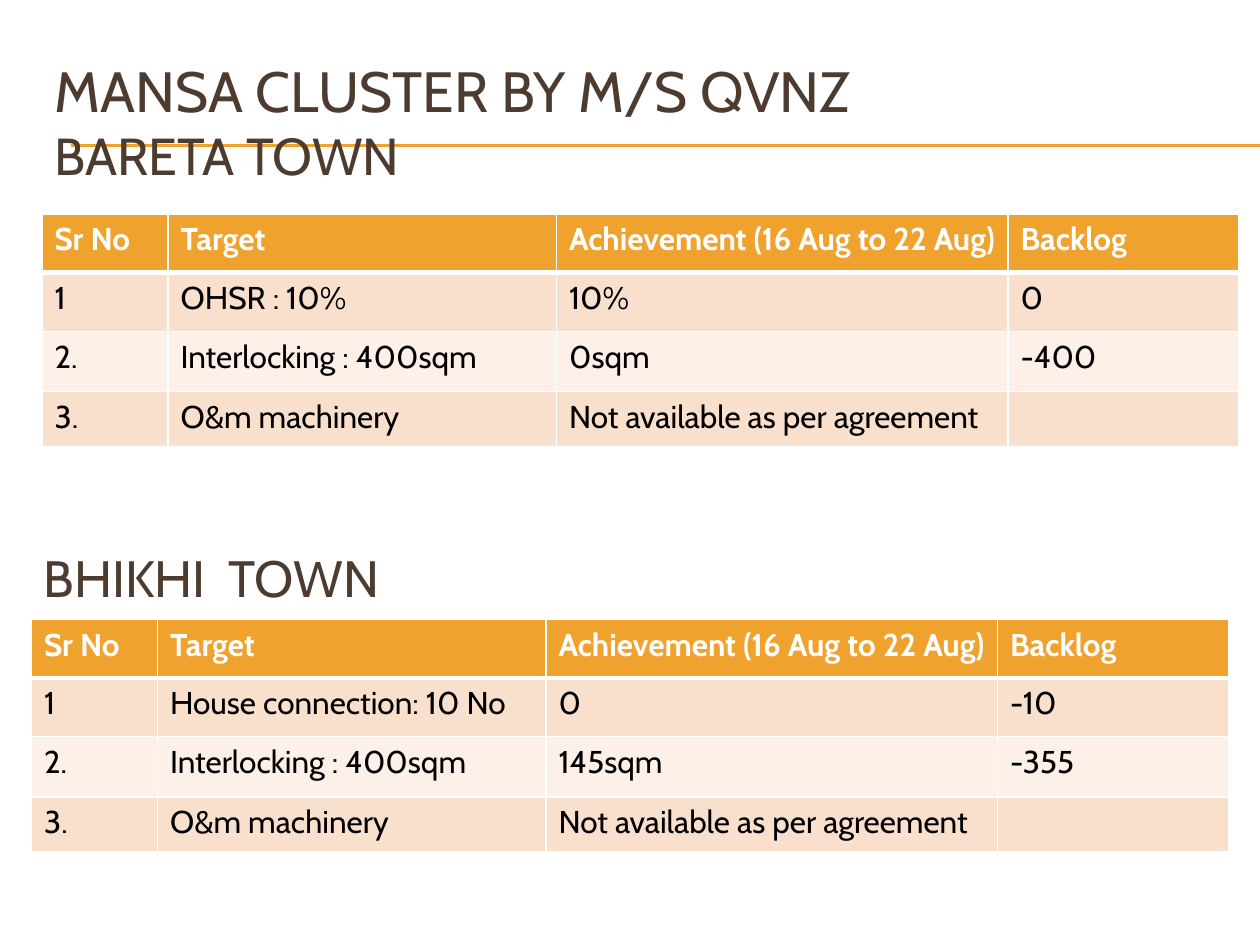
from typing import Any, NamedTuple

from lxml.etree import SubElement
from pptx import Presentation
from pptx.dml.color import RGBColor
from pptx.enum.shapes import MSO_CONNECTOR
from pptx.enum.text import MSO_ANCHOR
from pptx.oxml.ns import qn
from pptx.util import Pt

WHITE = RGBColor(0xFF, 0xFF, 0xFF)
BLACK = RGBColor(0x00, 0x00, 0x00)
BROWN = RGBColor(0x4E, 0x3B, 0x30)
GOLD = RGBColor(0xF0, 0xA2, 0x2E)
PEACH = RGBColor(0xF9, 0xE0, 0xCD)
CREAM = RGBColor(0xFC, 0xF0, 0xE8)

FONT = "Cabin"
COLS = (72, 222, 258, 132)
ROWS = (33.5, 33.5, 34.5, 31.5)
HEAD = ("Sr No", "Target", "Achievement (16 Aug to 22 Aug)", "Backlog")
LAST = ("3.", "O&m machinery", "Not available as per agreement", "")


class Line(NamedTuple):
    text: str
    size: float


class Title(NamedTuple):
    left: float
    top: float
    height: float
    lines: tuple[Line, ...]


class Grid(NamedTuple):
    left: float
    top: float
    rows: tuple[tuple[str, ...], ...]


TITLES = (
    Title(24, 36, 66, (Line("MANSA CLUSTER BY M/S QVNZ", 32.4), Line("BARETA TOWN", 29.7))),
    Title(18, 306, 48, (Line("BHIKHI  TOWN", 29.2),)),
)
GRIDS = (
    Grid(24, 122.4, (
        HEAD,
        ("1", "OHSR : 10%", "10%", "0"),
        ("2.", "Interlocking : 400sqm", "0sqm", "-400"),
        LAST,
    )),
    Grid(18, 354, (
        HEAD,
        ("1", "House connection: 10 No", "0", "-10"),
        ("2.", "Interlocking : 400sqm", "145sqm", "-355"),
        LAST,
    )),
)


def style(font: Any, size: float, color: RGBColor, bold: bool = False) -> None:
    for key, value in {"name": FONT, "size": Pt(size), "bold": bold}.items():
        setattr(font, key, value)
    font.color.rgb = color


def draw_rule(slide: Any, top: float) -> None:
    rule = slide.shapes.add_connector(
        MSO_CONNECTOR.STRAIGHT, Pt(40.5), Pt(top), Pt(720), Pt(top))
    rule.line.color.rgb = GOLD
    rule.line.width = Pt(0.75)
    SubElement(rule._element.spPr, qn("a:effectLst"))


def draw_title(slide: Any, title: Title) -> None:
    box = slide.shapes.add_textbox(
        Pt(title.left), Pt(title.top), Pt(684), Pt(title.height))
    frame = box.text_frame
    for key, value in {"word_wrap": True, "vertical_anchor": MSO_ANCHOR.MIDDLE}.items():
        setattr(frame, key, value)
    para = frame.paragraphs[0]
    for index, line in enumerate(title.lines):
        if index:
            para.add_line_break()
        run = para.add_run()
        run.text = line.text
        style(run.font, line.size, BROWN)


def edge(cell: Any, row: int) -> None:
    props = cell._tc.get_or_add_tcPr()
    sides = {"L": 1, "R": 1, "T": 3 if row == 1 else 1, "B": 3 if row == 0 else 1}
    for side, width in sides.items():
        line = SubElement(props, qn(f"a:ln{side}"), w=str(Pt(width)))
        fill = SubElement(line, qn("a:solidFill"))
        SubElement(fill, qn("a:srgbClr"), val=str(WHITE))


def draw_cell(cell: Any, text: str, row: int) -> None:
    edge(cell, row)
    cell.fill.solid()
    cell.fill.fore_color.rgb = GOLD if row == 0 else PEACH if row % 2 else CREAM
    para = cell.text_frame.paragraphs[0]
    if text:
        run = para.add_run()
        run.text = text
        style(run.font, 18, BLACK if row else WHITE, row == 0)
    else:
        SubElement(para._p, qn("a:endParaRPr"), sz="1800")


def draw_grid(slide: Any, grid: Grid) -> None:
    table = slide.shapes.add_table(
        len(ROWS), len(COLS), Pt(grid.left), Pt(grid.top),
        Pt(sum(COLS)), Pt(sum(ROWS))).table
    for col, width in zip(table.columns, COLS):
        col.width = Pt(width)
    for row, height in zip(table.rows, ROWS):
        row.height = Pt(height)
    for row, texts in enumerate(grid.rows):
        for col, text in enumerate(texts):
            draw_cell(table.cell(row, col), text, row)


def main() -> None:
    deck = Presentation()
    for key, value in {"slide_width": Pt(720), "slide_height": Pt(540)}.items():
        setattr(deck, key, value)
    slide = deck.slides.add_slide(deck.slide_layouts[6])
    for top in (82.8, 83.5):
        draw_rule(slide, top)
    for title in TITLES:
        draw_title(slide, title)
    for grid in GRIDS:
        draw_grid(slide, grid)
    deck.save("out.pptx")


if __name__ == "__main__":
    main()
